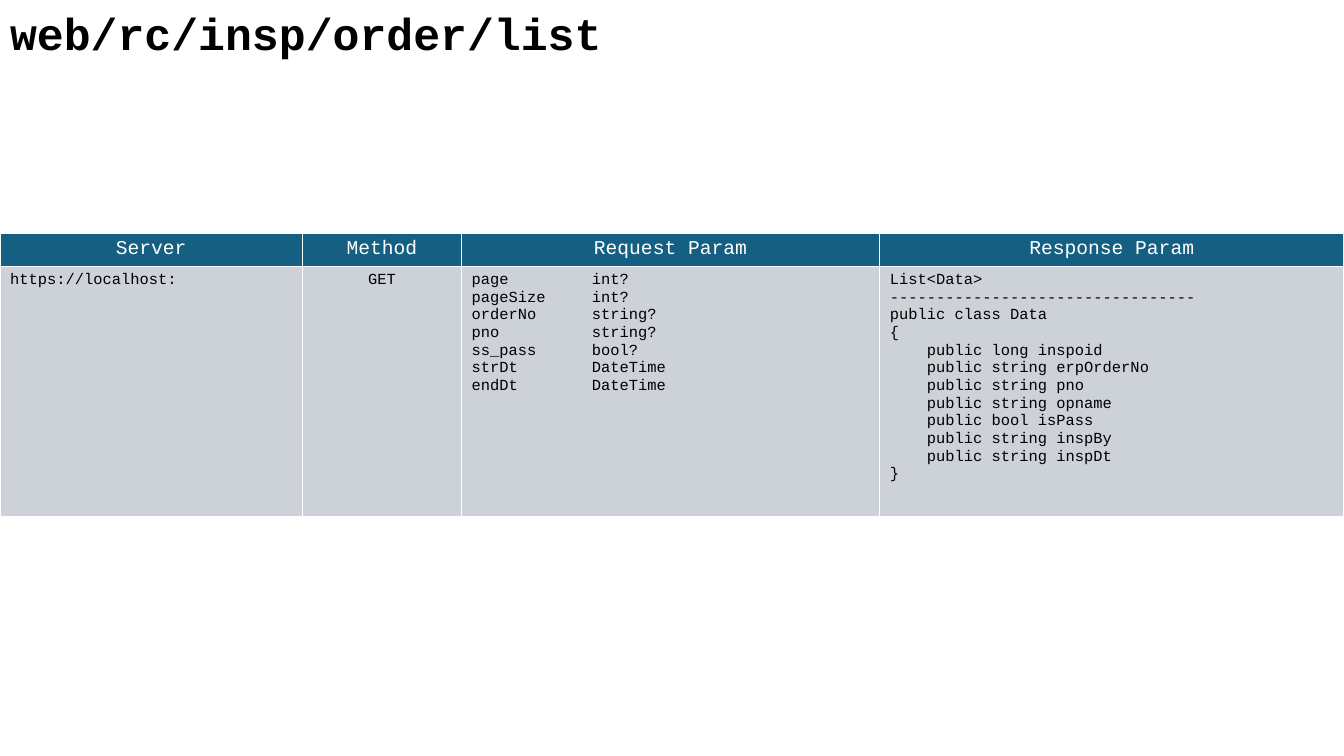
from lxml import etree
from pptx import Presentation
from pptx.dml.color import RGBColor
from pptx.enum.text import MSO_ANCHOR, MSO_AUTO_SIZE, PP_ALIGN
from pptx.oxml.ns import qn
from pptx.util import Cm, Pt

LEFT, CENTER = PP_ALIGN.LEFT, PP_ALIGN.CENTER
MIDDLE, NO_FIT = MSO_ANCHOR.MIDDLE, MSO_AUTO_SIZE.NONE

FONT = "Courier New"
COLORS = {"text": "000000", "header": "156082", "body": "CCD2D8", "white": "FFFFFF"}

TITLE = "web/rc/insp/order/list"
HEADERS = ["Server", "Method", "Request Param", "Response Param"]
REQUEST = [
    ("page", "int?"),
    ("pageSize", "int?"),
    ("orderNo", "string?"),
    ("pno", "string?"),
    ("ss_pass", "bool?"),
    ("strDt", "DateTime"),
    ("endDt", "DateTime"),
]
RESPONSE = """List<Data>
---------------------------------
public class Data
{
    public long inspoid
    public string erpOrderNo
    public string pno
    public string opname
    public bool isPass
    public string inspBy
    public string inspDt
}"""
BODY = [
    "https://localhost:",
    "GET",
    "\n".join(f"{name}\t{kind}" for name, kind in REQUEST),
    RESPONSE,
]
COL_WIDTHS = [7.62, 4.01, 10.54, 11.7]
ROW_HEIGHTS = [0.84, 6.3]
TYPE_TAB = 3.03


def rgb(name):
    return RGBColor.from_string(COLORS[name])


def style_paragraph(p, size, color, align, bold=False):
    p.alignment = align
    p.font.name = FONT
    p.font.size = Pt(size)
    p.font.bold = bold
    p.font.color.rgb = rgb(color)


def add_tab_stop(p, position):
    tabs = etree.SubElement(p._p.get_or_add_pPr(), qn("a:tabLst"))
    etree.SubElement(tabs, qn("a:tab"), pos=str(Cm(position)), algn="l")


def add_borders(cell, color, width):
    tcPr = cell._tc.get_or_add_tcPr()
    for side in ("lnL", "lnR", "lnT", "lnB"):
        ln = etree.SubElement(tcPr, qn(f"a:{side}"), w=str(Pt(width)))
        fill = etree.SubElement(ln, qn("a:solidFill"))
        etree.SubElement(fill, qn("a:srgbClr"), val=COLORS[color])


def fill_cell(cell, text, size, color, fill, align):
    add_borders(cell, "white", 1)
    cell.fill.solid()
    cell.fill.fore_color.rgb = rgb(fill)
    cell.text = text
    for p in cell.text_frame.paragraphs:
        if "\t" in text:
            add_tab_stop(p, TYPE_TAB)
        style_paragraph(p, size, color, align)


def add_title(s, left, top, width, height):
    title = s.shapes.title
    title.left, title.top = Cm(left), Cm(top)
    title.width, title.height = Cm(width), Cm(height)
    tf = title.text_frame
    tf.text = TITLE
    tf.word_wrap = True
    tf.auto_size = NO_FIT
    tf.vertical_anchor = MIDDLE
    style_paragraph(tf.paragraphs[0], 32, "text", LEFT, bold=True)


def add_api_table(s, left, top, width, height):
    table = s.shapes.add_table(2, len(HEADERS), Cm(left), Cm(top),
                               Cm(width), Cm(height)).table
    for row, row_height in zip(table.rows, ROW_HEIGHTS):
        row.height = Cm(row_height)
    for i, col_width in enumerate(COL_WIDTHS):
        table.columns[i].width = Cm(col_width)
        fill_cell(table.cell(0, i), HEADERS[i], 14, "white", "header", CENTER)
        align = CENTER if HEADERS[i] == "Method" else LEFT
        fill_cell(table.cell(1, i), BODY[i], 11, "text", "body", align)


def main():
    prs = Presentation()
    prs.slide_width, prs.slide_height = Cm(33.87), Cm(19.05)
    s = prs.slides.add_slide(prs.slide_layouts.get_by_name("Title Only"))

    # Endpoint name
    add_title(s, 0, 0, 24, 1.63)

    # Server, method and parameters
    add_api_table(s, 0, 5.88, sum(COL_WIDTHS), sum(ROW_HEIGHTS))

    prs.save("out.pptx")


if __name__ == "__main__":
    main()
